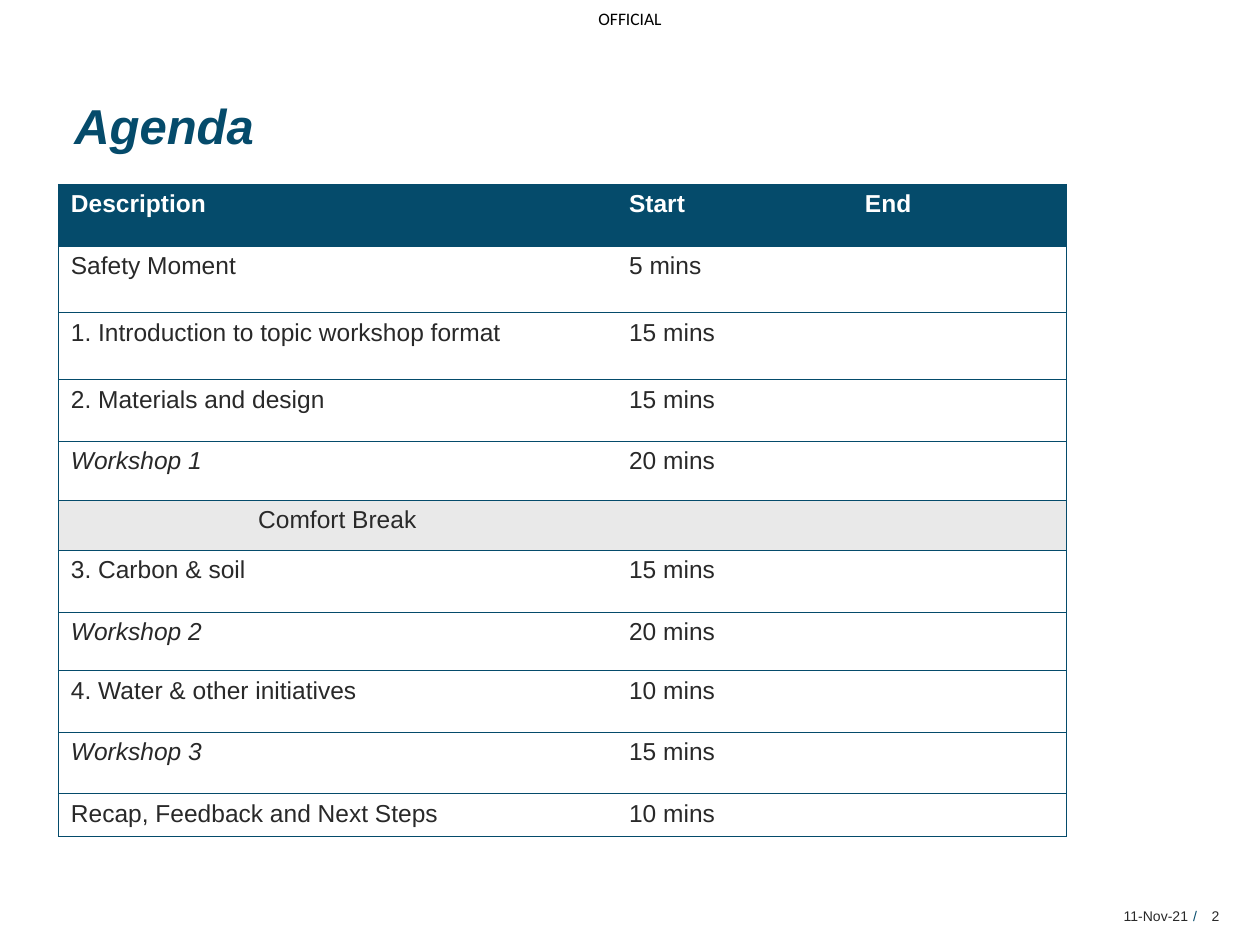
from dataclasses import dataclass

from lxml.etree import SubElement
from pptx import Presentation
from pptx.dml.color import RGBColor
from pptx.enum.text import MSO_ANCHOR, PP_ALIGN
from pptx.oxml.ns import qn
from pptx.util import Pt


@dataclass(frozen=True)
class Theme:
    teal: str = "054B6B"
    ink: str = "292929"
    black: str = "000000"
    white: str = "FFFFFF"
    grey: str = "E9E9E9"
    font: str = "Arial"
    marking_font: str = "Calibri"
    title: int = 28
    body: int = 14
    marking: int = 10
    footer: int = 8
    rule: float = 0.5


T = Theme()
HEADER = ("Description", "Start", "End")
BREAK = "Comfort Break"
AGENDA = [
    ("Safety Moment", "5 mins", 38.2),
    ("1. Introduction to topic workshop format", "15 mins", 38.2),
    ("2. Materials and design", "15 mins", 35),
    ("Workshop 1", "20 mins", 34),
    (BREAK, "", 28.6),
    ("3. Carbon & soil", "15 mins", 35.3),
    ("Workshop 2", "20 mins", 33.5),
    ("4. Water & other initiatives", "10 mins", 35),
    ("Workshop 3", "15 mins", 35.3),
    ("Recap, Feedback and Next Steps", "10 mins", 24.5),
]
HEADER_HEIGHT = 35.3
COLUMNS = (319, 134.8, 122.2)


def add_run(p, text, size, color, font=T.font, bold=False, italic=False):
    r = p.add_run()
    r.text = text
    r.font.name, r.font.size = font, Pt(size)
    r.font.bold, r.font.italic = bold, italic
    r.font.color.rgb = RGBColor.from_string(color)


def clear_margins(tf):
    tf.margin_left = tf.margin_top = tf.margin_right = tf.margin_bottom = 0


def add_title(s, text):
    sp = s.shapes.title
    sp.left, sp.top, sp.width, sp.height = Pt(42.5), Pt(54.7), Pt(572.4), Pt(33.8)
    tf = sp.text_frame
    clear_margins(tf)
    tf.vertical_anchor = MSO_ANCHOR.BOTTOM
    p = tf.paragraphs[0]
    p.alignment = PP_ALIGN.LEFT
    add_run(p, text, T.title, T.teal, bold=True, italic=True)


def add_label(s, text, box, size, color, align, font=T.font):
    tf = s.shapes.add_textbox(*(Pt(v) for v in box)).text_frame
    clear_margins(tf)
    tf.word_wrap = True
    tf.vertical_anchor = MSO_ANCHOR.MIDDLE
    p = tf.paragraphs[0]
    p.alignment = align
    add_run(p, text, size, color, font)


def set_borders(cell, sides):
    tcPr = cell._tc.get_or_add_tcPr()
    for side in "LRTB":
        ln = SubElement(tcPr, qn(f"a:ln{side}"), w=str(Pt(T.rule)))
        if side in sides:
            fill = SubElement(ln, qn("a:solidFill"))
            SubElement(fill, qn("a:srgbClr"), val=T.teal)
        else:
            SubElement(ln, qn("a:noFill"))


def fill_row(table, row, texts, fill, color, bold=False):
    last = len(COLUMNS) - 1
    for col, text in enumerate(texts):
        cell = table.cell(row, col)
        set_borders(cell, "TB" + "L" * (col == 0) + "R" * (col == last))
        cell.fill.solid()
        cell.fill.fore_color.rgb = RGBColor.from_string(fill)
        p = cell.text_frame.paragraphs[0]
        if text:
            p.alignment = PP_ALIGN.CENTER if text == BREAK else PP_ALIGN.LEFT
            add_run(p, text, T.body, color, bold=bold,
                    italic=text.startswith("Workshop"))
        else:
            p._p.get_or_add_endParaRPr().set("sz", str(T.body * 100))


def add_agenda(s):
    heights = [HEADER_HEIGHT] + [height for _, _, height in AGENDA]
    table = s.shapes.add_table(len(heights), len(COLUMNS), Pt(33.3), Pt(105.3),
                               Pt(sum(COLUMNS)), Pt(sum(heights))).table
    for column, width in zip(table.columns, COLUMNS):
        column.width = Pt(width)
    for row, height in zip(table.rows, heights):
        row.height = Pt(height)
    fill_row(table, 0, HEADER, T.teal, T.white, bold=True)
    for i, (item, duration, _) in enumerate(AGENDA, start=1):
        fill = T.grey if item == BREAK else T.white
        fill_row(table, i, (item, duration, ""), fill, T.ink)


def main():
    prs = Presentation()
    prs.slide_width, prs.slide_height = Pt(720), Pt(540)
    s = prs.slides.add_slide(prs.slide_layouts[5])
    add_label(s, "OFFICIAL", (331.2, 0, 57.6, 21), T.marking, T.black,
              PP_ALIGN.CENTER, T.marking_font)
    add_title(s, "Agenda")
    add_agenda(s)
    footer = [
        ("11-Nov-21", 511.2, 167.8, T.ink, PP_ALIGN.RIGHT),
        ("/", 681.8, 3, T.teal, PP_ALIGN.LEFT),
        ("2", 685.4, 11.5, T.ink, PP_ALIGN.RIGHT),
    ]
    for text, left, width, color, align in footer:
        add_label(s, text, (left, 516.2, width, 14.4), T.footer, color, align)
    prs.save("out.pptx")


if __name__ == "__main__":
    main()
